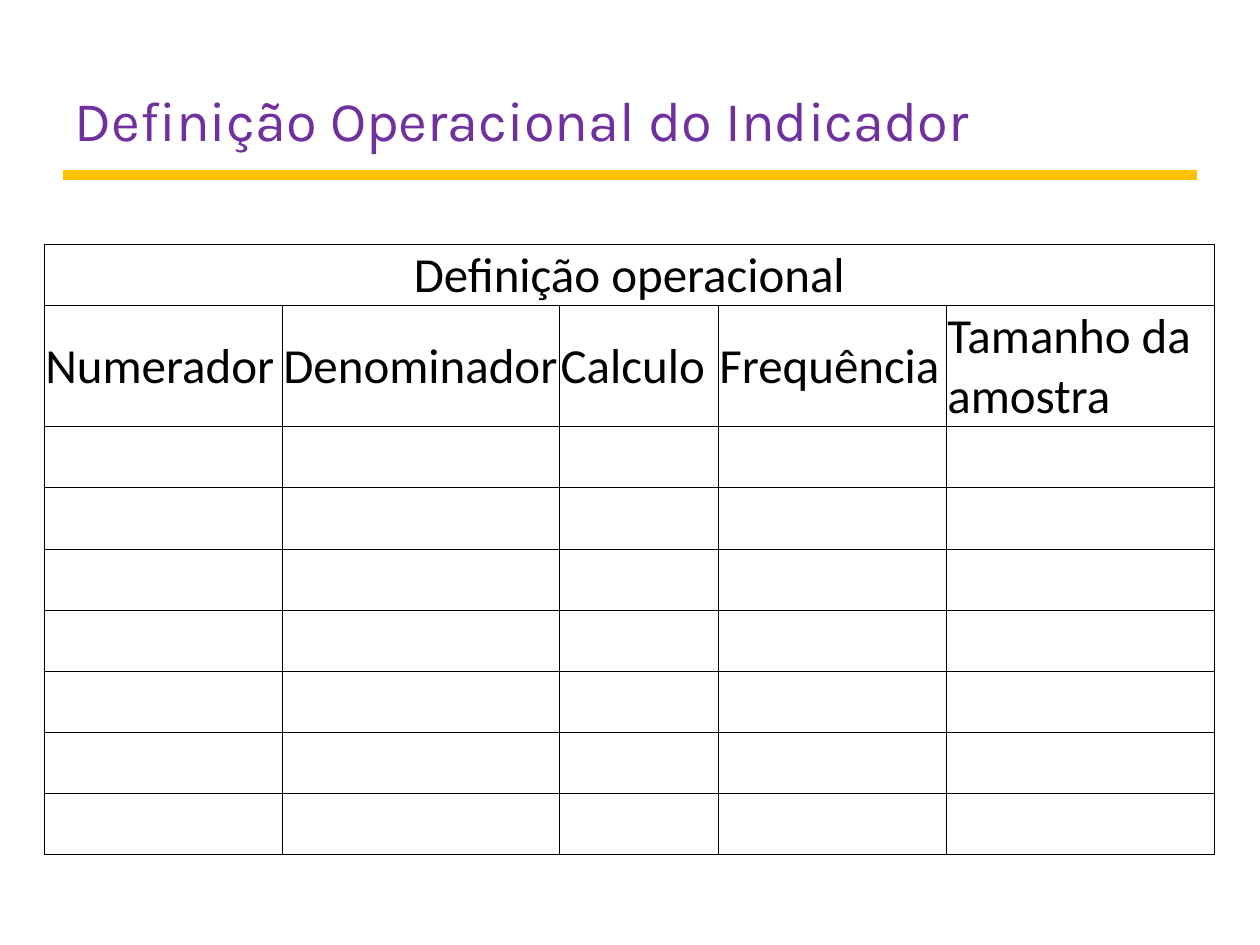
from lxml.etree import SubElement
from pptx import Presentation
from pptx.dml.color import RGBColor
from pptx.enum.shapes import MSO_CONNECTOR
from pptx.enum.text import MSO_ANCHOR, PP_ALIGN
from pptx.oxml.ns import qn
from pptx.util import Inches, Pt

TITLE = "Definição Operacional do Indicador"
TABLE_HEADING = "Definição operacional"
COLUMNS = [
    ("Numerador", 1.89),
    ("Denominador", 2.2),
    ("Calculo", 1.26),
    ("Frequência", 1.81),
    ("Tamanho da amostra", 2.13),
]
EMPTY_ROWS = 7
ROW_HEIGHT, LABEL_HEIGHT = 0.48, 0.95

PURPLE = RGBColor(0x70, 0x30, 0xA0)
GOLD = RGBColor(0xFF, 0xC0, 0x00)
BLACK = RGBColor(0, 0, 0)


def style_text(para, font_name, size, color):
    para.font.name = font_name
    para.font.size = Pt(size)
    para.font.color.rgb = color


def add_title(page):
    title = page.shapes.title
    title.left, title.top = Inches(0.5), Inches(0.25)
    title.width, title.height = Inches(9), Inches(1)
    frame = title.text_frame
    frame.text = TITLE
    frame.word_wrap = True
    frame.vertical_anchor = MSO_ANCHOR.BOTTOM
    frame.margin_left = frame.margin_right = Inches(0.09)
    frame.margin_top = frame.margin_bottom = Inches(0.04)
    para = frame.paragraphs[0]
    para.alignment = PP_ALIGN.LEFT
    style_text(para, "Karla", 32, PURPLE)


def add_rule(page):
    rule = page.shapes.add_connector(
        MSO_CONNECTOR.STRAIGHT, Inches(0.5), Inches(1.39), Inches(9.5), Inches(1.39))
    rule.line.color.rgb = GOLD
    rule.line.width = Pt(6)
    SubElement(rule._element.spPr, qn("a:effectLst"))


def format_cell(cell):
    """Give a cell thin black borders, no fill and tight margins."""
    properties = cell._tc.get_or_add_tcPr()
    for side in ("a:lnL", "a:lnR", "a:lnT", "a:lnB"):
        border = SubElement(properties, qn(side), w=str(Pt(0.5)))
        fill = SubElement(border, qn("a:solidFill"))
        SubElement(fill, qn("a:srgbClr"), val=str(BLACK))
    cell.fill.background()
    cell.vertical_anchor = MSO_ANCHOR.MIDDLE
    cell.margin_left = cell.margin_right = cell.margin_top = Inches(0.01)
    cell.margin_bottom = 0


def add_definition_table(page):
    heights = [ROW_HEIGHT, LABEL_HEIGHT] + [ROW_HEIGHT] * EMPTY_ROWS
    widths = [width for _, width in COLUMNS]
    table = page.shapes.add_table(
        len(heights), len(widths), Inches(0.35), Inches(1.94),
        Inches(sum(widths)), Inches(sum(heights))).table
    table.first_row = table.horz_banding = False
    for column, width in zip(table.columns, widths):
        column.width = Inches(width)
    for row, height in zip(table.rows, heights):
        row.height = Inches(height)

    heading = table.cell(0, 0)
    heading.merge(table.cell(0, len(widths) - 1))
    heading.text_frame.text = TABLE_HEADING
    heading.text_frame.paragraphs[0].alignment = PP_ALIGN.CENTER
    for index, (label, _) in enumerate(COLUMNS):
        table.cell(1, index).text_frame.text = label
    for cell in table.iter_cells():
        format_cell(cell)
        style_text(cell.text_frame.paragraphs[0], "Calibri", 28, BLACK)


def main():
    deck = Presentation()
    deck.slide_width, deck.slide_height = Inches(10), Inches(7.5)
    page = deck.slides.add_slide(deck.slide_layouts[5])
    add_rule(page)
    add_title(page)
    add_definition_table(page)
    deck.save("out.pptx")


if __name__ == "__main__":
    main()
